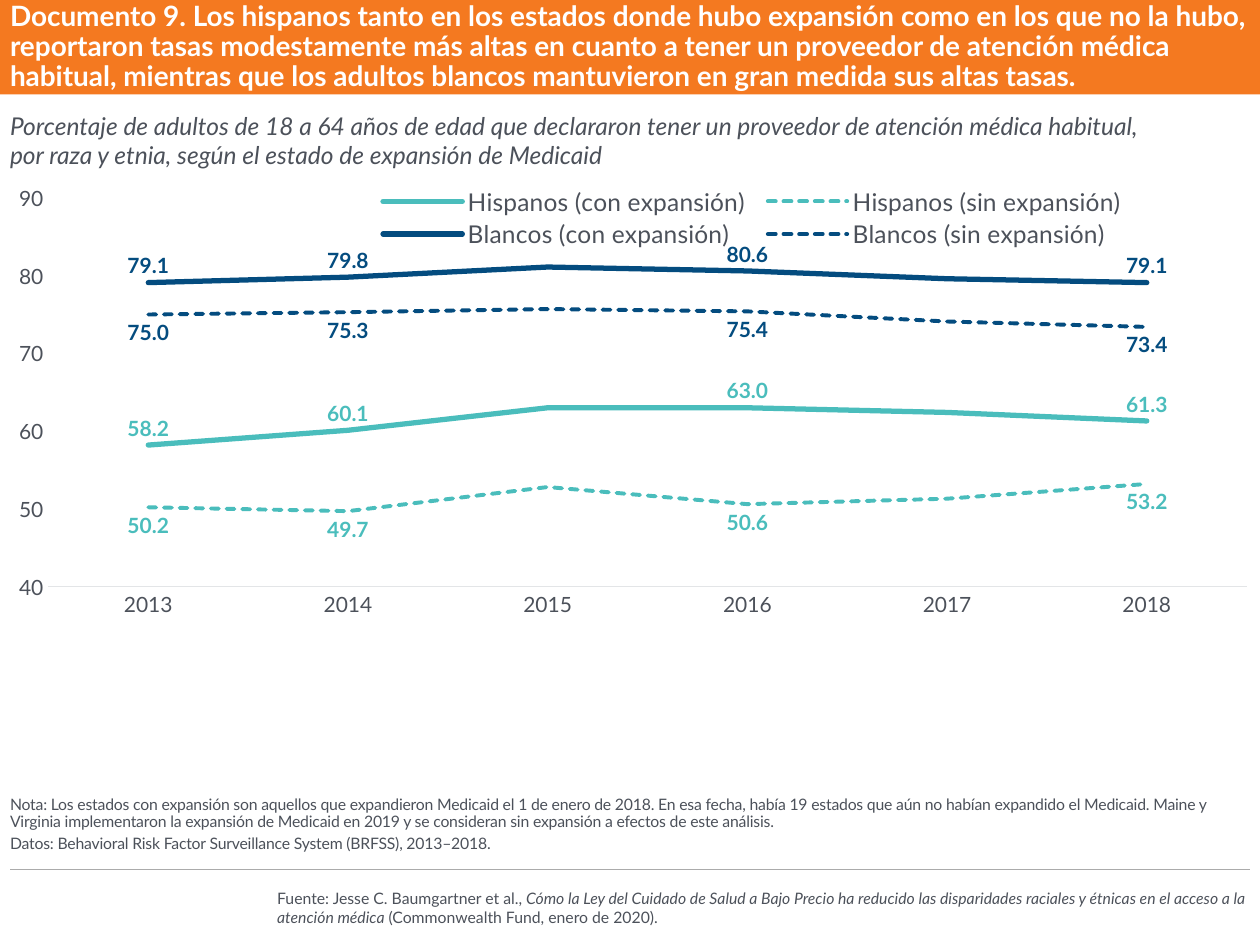
from pptx import Presentation, util as u
from pptx.chart.data import CategoryChartData
from pptx.dml.color import RGBColor
from pptx.enum import chart as ch, dml, shapes, text
from pptx.oxml import parse_xml
from pptx.oxml.ns import nsdecls

FONT = "Lato"
ORANGE, WHITE, GRAY = "F47920", "FFFFFF", "4C515A"
RULE, AXIS = "ABABAB", "E3E5E7"
TEAL, NAVY = "4ABDBC", "044C7F"
TOP, BOTTOM = ch.XL_LABEL_POSITION.ABOVE, ch.XL_LABEL_POSITION.BELOW

TITLE = ("Documento 9. Los hispanos tanto en los estados donde hubo expansión como en los que "
         "no la hubo, reportaron tasas modestamente más altas en cuanto a tener un proveedor de "
         "atención médica habitual, mientras que los adultos blancos mantuvieron en gran medida "
         "sus altas tasas.")
SUBTITLE = ("Porcentaje de adultos de 18 a 64 años de edad que declararon tener un proveedor de "
            "atención médica habitual, por raza y etnia, según el estado de expansión de Medicaid")
NOTES = [
    ("Nota: Los estados con expansión son aquellos que expandieron Medicaid el 1 de enero de 2018. "
     "En esa fecha, había 19 estados que aún no habían expandido el Medicaid. Maine y Virginia "
     "implementaron la expansión de Medicaid en 2019 y se consideran sin expansión a efectos de "
     "este análisis.", 3),
    ("Datos: Behavioral Risk Factor Surveillance System (BRFSS), 2013–2018.", 6),
]
SOURCE = [
    ("Fuente: Jesse C. Baumgartner et al., ", False),
    ("Cómo la Ley del Cuidado de Salud a Bajo Precio ha reducido las disparidades raciales y "
     "étnicas en el acceso a la atención médica", True),
    (" (Commonwealth Fund, enero de 2020).", False),
]
YEARS = ["2013", "2014", "2015", "2016", "2017", "2018"]
UNLABELED = [2, 4]
# name, values, color, dashed, label position
SERIES = [
    ("Hispanos (con expansión)", [58.2, 60.1, 63, 63, 62.4, 61.3], TEAL, False, TOP),
    ("Hispanos (sin expansión)", [50.2, 49.7, 52.8, 50.6, 51.3, 53.2], TEAL, True, BOTTOM),
    ("Blancos (con expansión)", [79.1, 79.8, 81.1, 80.6, 79.6, 79.1], NAVY, False, TOP),
    ("Blancos (sin expansión)", [75, 75.3, 75.7, 75.4, 74.1, 73.4], NAVY, True, BOTTOM),
]


def rgb(color):
    return RGBColor.from_string(color)


def set_font(font, size, color, bold=None, italic=None):
    font.name, font.size, font.color.rgb = FONT, u.Pt(size), rgb(color)
    font.bold, font.italic = bold, italic


def add_text_frame(page, box, anchor):
    frame = page.shapes.add_textbox(*map(u.Inches, box)).text_frame
    frame.word_wrap = True
    frame.vertical_anchor = anchor
    frame.margin_left = frame.margin_top = frame.margin_right = frame.margin_bottom = 0
    return frame


def add_title(page, box):
    left, top, width, height = box
    band = page.shapes.add_shape(shapes.MSO_SHAPE.RECTANGLE, *map(u.Inches, box))
    band.shadow.inherit = False
    band.fill.solid()
    band.fill.fore_color.rgb = rgb(ORANGE)
    band.line.fill.background()
    frame = add_text_frame(page, (left + 0.08, top, width - 0.16, height), text.MSO_ANCHOR.MIDDLE)
    para = frame.paragraphs[0]
    para.text = TITLE
    para.line_spacing = 0.9
    set_font(para.font, 16, WHITE, bold=True)


def add_subtitle(page, box):
    para = add_text_frame(page, box, text.MSO_ANCHOR.MIDDLE).paragraphs[0]
    para.text = SUBTITLE
    set_font(para.font, 14, GRAY, italic=True)


def add_notes(page, box):
    frame = add_text_frame(page, box, text.MSO_ANCHOR.BOTTOM)
    for index, (note, space_after) in enumerate(NOTES):
        para = frame.add_paragraph() if index else frame.paragraphs[0]
        span = para.add_run()
        span.text = note
        span.font._element.set("spc", "-10")
        para.line_spacing = 0.9
        para.space_after = u.Pt(space_after)
        set_font(para.font, 9, GRAY)


def add_source(page, box):
    para = add_text_frame(page, box, text.MSO_ANCHOR.MIDDLE).paragraphs[0]
    for words, italic in SOURCE:
        span = para.add_run()
        span.text = words
        span.font.italic = italic
    set_font(para.font, 9, GRAY)


def add_rule(page, left, right, y):
    rule = page.shapes.add_connector(shapes.MSO_CONNECTOR.STRAIGHT, u.Inches(right), u.Inches(y),
                                     u.Inches(left), u.Inches(y))
    rule.line.color.rgb = rgb(RULE)
    rule.line.width = u.Pt(0.75)
    rule._element.spPr.append(parse_xml(f"<a:effectLst {nsdecls('a')}/>"))


def chart_layout(x, y, w, h, inner=False):
    """Manual chart layout, in fractions of the chart area."""
    target = '<c:layoutTarget val="inner"/>' if inner else ""
    sizes = "".join(f'<c:{key} val="{value}"/>' for key, value in zip("xywh", (x, y, w, h)))
    return parse_xml(f'<c:layout {nsdecls("c")}><c:manualLayout>{target}<c:xMode val="edge"/>'
                     f'<c:yMode val="edge"/>{sizes}</c:manualLayout></c:layout>')


def style_axes(chart):
    category, value = chart.category_axis, chart.value_axis
    for axis in (category, value):
        axis.has_major_gridlines = False
        axis.major_tick_mark = axis.minor_tick_mark = ch.XL_TICK_MARK.NONE
        set_font(axis.tick_labels.font, 12, GRAY)
    category.format.line.color.rgb = rgb(AXIS)
    category.format.line.width = u.Pt(0.75)
    value.format.line.fill.background()
    value.minimum_scale, value.maximum_scale, value.major_unit = 40, 90, 10
    value.tick_labels.number_format = "0"
    value.tick_labels.number_format_is_linked = False


def style_series(series, color, dashed, position):
    series.smooth = False
    line = series.format.line
    line.color.rgb = rgb(color)
    line.width = u.Pt(2.25 if dashed else 3)
    if dashed:
        line.dash_style = dml.MSO_LINE.SQUARE_DOT
    series._element.xpath("c:spPr/a:ln")[0].set("cap", "rnd")
    labels = series.data_labels
    labels.show_value = True
    labels.position = position
    labels.number_format = "#,##0.0"
    labels.number_format_is_linked = False
    set_font(labels.font, 12, color, bold=True)
    for index in reversed(UNLABELED):
        labels._element.insert(0, parse_xml(
            f'<c:dLbl {nsdecls("c")}><c:idx val="{index}"/><c:delete val="1"/></c:dLbl>'))


def add_rate_chart(page, box):
    data = CategoryChartData(number_format="0.0")
    data.categories = YEARS
    for name, values, *_ in SERIES:
        data.add_series(name, values)
    chart = page.shapes.add_chart(ch.XL_CHART_TYPE.LINE, *map(u.Inches, box), data).chart
    chart.has_title = False
    set_font(chart.font, 10, GRAY)
    chart.plots[0].vary_by_categories = False
    style_axes(chart)
    for series, (_, _, *style) in zip(chart.series, SERIES):
        style_series(series, *style)

    chart.has_legend = True
    legend = chart.legend
    legend.position = ch.XL_LEGEND_POSITION.BOTTOM
    legend.include_in_layout = False
    set_font(legend.font, 14, GRAY)
    for old in chart._chartSpace.xpath(".//c:plotArea/c:layout | .//c:legend/c:layout"):
        old.getparent().remove(old)
    legend._element.insert(1, chart_layout(0.29, 0, 0.62, 0.15))
    plot_area = chart._chartSpace.xpath(".//c:plotArea")[0]
    plot_area.insert(0, chart_layout(0.031, 0.031, 0.969, 0.862, inner=True))


def main():
    deck = Presentation()
    deck.slide_width, deck.slide_height = u.Inches(10), u.Inches(7.5)
    page = deck.slides.add_slide(deck.slide_layouts[6])
    add_title(page, (0, 0, 10, 0.75))
    add_rule(page, 0.08, 9.92, 6.9)
    add_source(page, (2.2, 7.05, 7.75, 0.3))
    add_rate_chart(page, (0.08, 1.46, 9.82, 3.58))
    add_subtitle(page, (0.08, 0.88, 9, 0.47))
    add_notes(page, (0.08, 6.23, 9.84, 0.54))
    deck.save("out.pptx")


if __name__ == "__main__":
    main()
